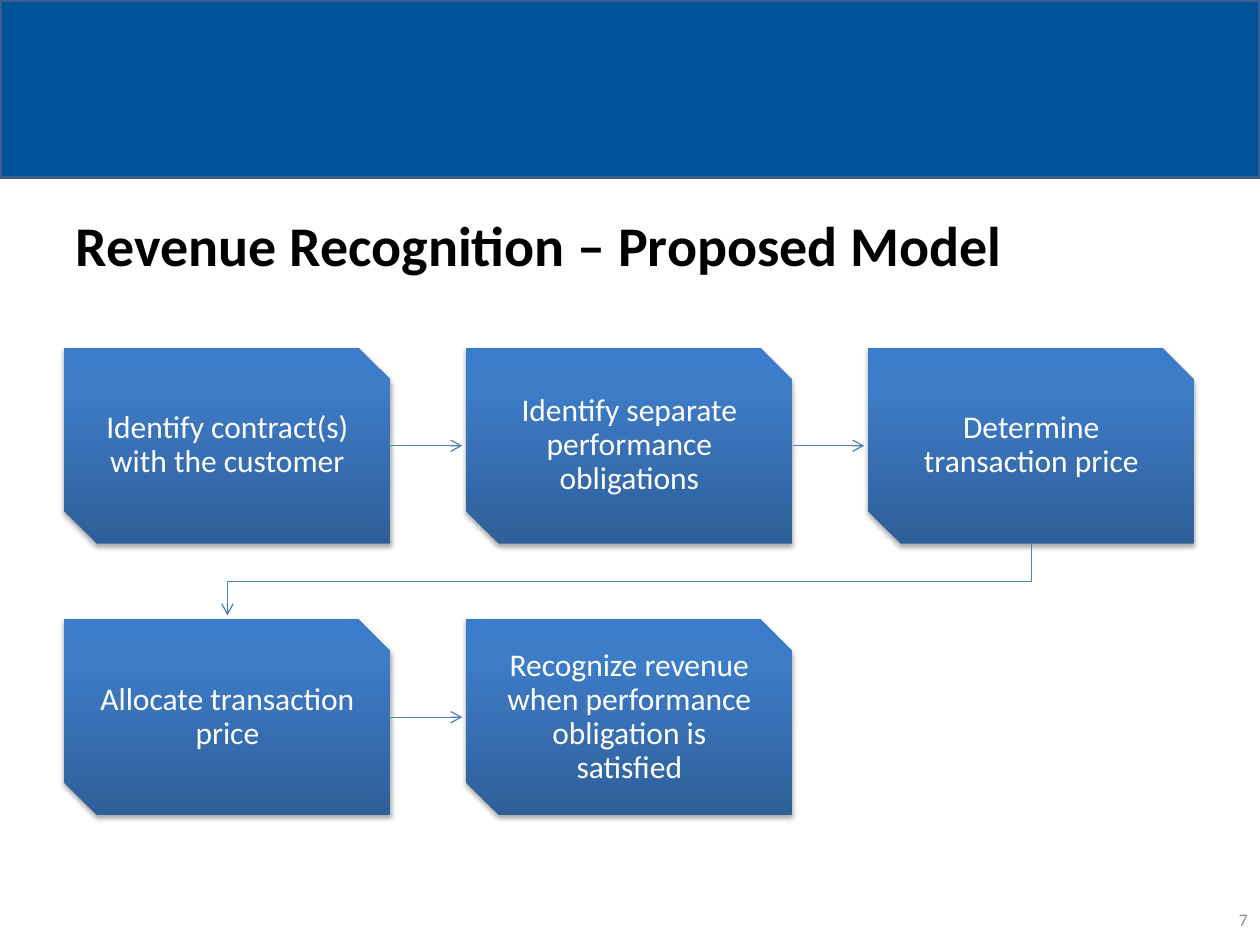
from copy import deepcopy

from lxml.etree import SubElement
from pptx import Presentation
from pptx.dml.color import RGBColor
from pptx.enum.shapes import MSO_CONNECTOR, MSO_SHAPE
from pptx.enum.text import MSO_ANCHOR, PP_ALIGN
from pptx.oxml.ns import qn
from pptx.util import Inches, Pt

STEPS = [
    "Identify contract(s) with the customer",
    "Identify separate performance obligations",
    "Determine transaction price",
    "Allocate transaction price",
    "Recognize revenue when performance obligation is satisfied",
]
COLUMNS = 3
LEFT, TOP = 0.51, 2.76
WIDTH, HEIGHT = 2.59, 1.555
COLUMN_STEP, ROW_STEP = 3.19, 2.155
ARROW_GAP = 0.03


def rgb(value):
    return RGBColor.from_string(value)


def write_text(frame, text, size, color, bold=False, align=PP_ALIGN.LEFT,
               margin=None, line_spacing=None):
    frame.word_wrap = True
    frame.vertical_anchor = MSO_ANCHOR.MIDDLE
    if margin is not None:
        frame.margin_left = frame.margin_right = Inches(margin)
        frame.margin_top = frame.margin_bottom = Inches(margin)
    para = frame.paragraphs[0]
    para.alignment = align
    para.line_spacing = line_spacing
    span = para.add_run()
    span.text = text
    span.font.name = "Calibri"
    span.font.size = Pt(size)
    span.font.bold = bold
    span.font.color.rgb = rgb(color)


class ProcessSlide:
    bar_color, bar_edge = "00539B", "3A5F8C"
    arrow_color = "4F81BD"
    gradient = [(0, "2F5F99"), (0.8, "3D7CC7"), (1, "3A7CCB")]

    def __init__(self, page):
        self.page = page

    def bar(self, left, top, width, height):
        box = self.page.shapes.add_shape(
            MSO_SHAPE.RECTANGLE, Inches(left), Inches(top), Inches(width), Inches(height))
        box.shadow.inherit = False
        box.fill.solid()
        box.fill.fore_color.rgb = rgb(self.bar_color)
        box.line.color.rgb = rgb(self.bar_edge)
        box.line.width = Pt(2)

    def title(self, text, left, top, width, height):
        box = self.page.shapes.title
        box.left, box.top = Inches(left), Inches(top)
        box.width, box.height = Inches(width), Inches(height)
        write_text(box.text_frame, text, 32, "000000", bold=True)

    def page_number(self, text, left, top, width, height):
        box = self.page.shapes.add_textbox(
            Inches(left), Inches(top), Inches(width), Inches(height))
        write_text(box.text_frame, text, 10, "8C8C8C", align=PP_ALIGN.RIGHT)

    def step(self, text, left, top):
        box = self.page.shapes.add_shape(
            MSO_SHAPE.SNIP_2_DIAG_RECTANGLE,
            Inches(left), Inches(top), Inches(WIDTH), Inches(HEIGHT))
        self.shade(box)
        box.line.fill.background()
        self.drop_shadow(box)
        write_text(box.text_frame, text, 18, "FFFFFF", align=PP_ALIGN.CENTER,
                   margin=0.14, line_spacing=0.9)

    def shade(self, box):
        """Fill with the three-stop gradient, dark at the bottom."""
        box.fill.gradient()
        box.fill.gradient_angle = 90
        stop_list = box._element.spPr.find(qn("a:gradFill")).find(qn("a:gsLst"))
        stop_list.append(deepcopy(stop_list[-1]))
        for stop, (position, color) in zip(box.fill.gradient_stops, self.gradient):
            stop.position = position
            stop.color.rgb = rgb(color)

    def drop_shadow(self, box):
        box.shadow.inherit = False
        effects = box._element.spPr.find(qn("a:effectLst"))
        shadow = SubElement(effects, qn("a:outerShdw"), blurRad=str(Pt(3.1)),
                            dist=str(Pt(1.8)), dir="5400000", rotWithShape="0")
        color = SubElement(shadow, qn("a:srgbClr"), val="000000")
        SubElement(color, qn("a:alpha"), val="35000")

    def arrow(self, *points):
        """Draw an arrow through two or more points."""
        corners = [(Inches(x), Inches(y)) for x, y in points]
        if len(corners) == 2:
            line = self.page.shapes.add_connector(
                MSO_CONNECTOR.STRAIGHT, *corners[0], *corners[1])
            SubElement(line._element.spPr, qn("a:effectLst"))
        else:
            builder = self.page.shapes.build_freeform(*corners[0])
            builder.add_line_segments(corners[1:], close=False)
            line = builder.convert_to_shape()
            line.fill.background()
            line.shadow.inherit = False
        line.line.color.rgb = rgb(self.arrow_color)
        line.line.width = Pt(0.75)
        SubElement(line.line._get_or_add_ln(), qn("a:tailEnd"), type="arrow")


def main():
    deck = Presentation()
    deck.slide_width, deck.slide_height = Inches(10), Inches(7.5)
    slide = ProcessSlide(deck.slides.add_slide(deck.slide_layouts[5]))

    slide.bar(0, 0, 10, 1.41)
    slide.title("Revenue Recognition – Proposed Model", 0.5, 1.58, 9, 0.72)
    slide.page_number("7", 7.67, 7.1, 2.33, 0.4)

    corners = [(LEFT + i % COLUMNS * COLUMN_STEP, TOP + i // COLUMNS * ROW_STEP)
               for i in range(len(STEPS))]
    for text, (left, top) in zip(STEPS, corners):
        slide.step(text, left, top)

    for (left, top), (next_left, next_top) in zip(corners, corners[1:]):
        if top == next_top:
            middle = top + HEIGHT / 2
            slide.arrow((left + WIDTH, middle), (next_left - ARROW_GAP, middle))
        else:
            start, end = left + WIDTH / 2, next_left + WIDTH / 2
            bottom = top + HEIGHT
            turn = (bottom + next_top) / 2
            slide.arrow((start, bottom), (start, turn), (end, turn),
                        (end, next_top - ARROW_GAP))

    deck.save("out.pptx")


if __name__ == "__main__":
    main()
